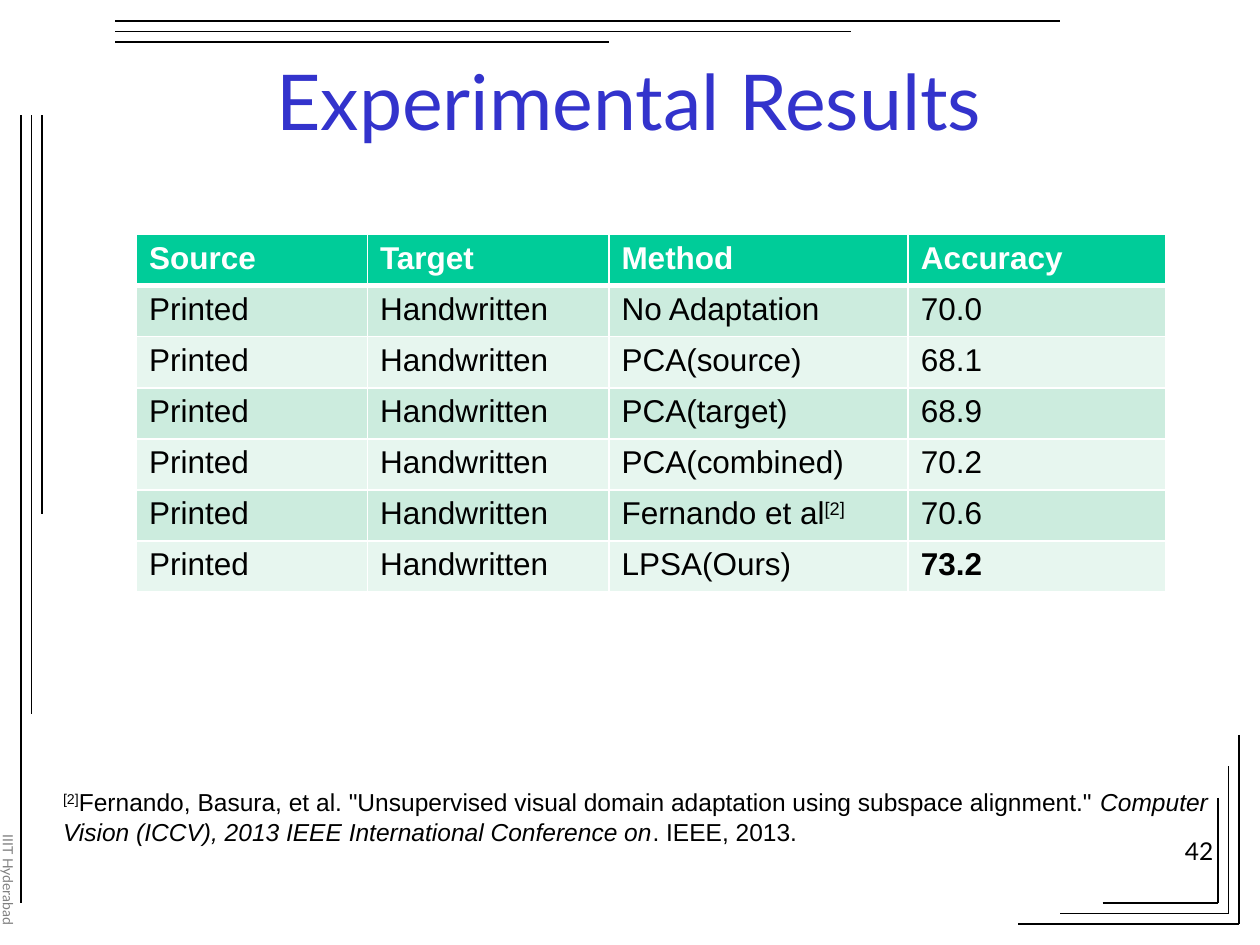
"""Build the "Experimental Results" slide with its ruled frame, table and citation."""
from dataclasses import dataclass
from typing import Optional

from lxml import etree
from pptx import Presentation
from pptx.dml.color import RGBColor
from pptx.enum import shapes, text
from pptx.oxml import ns
from pptx.util import Pt


@dataclass
class Run:
    text: str
    size: float
    color: str = "000000"
    font: str = "Arial"
    bold: bool = False
    italic: bool = False
    raised: bool = False


@dataclass
class Box:
    left: float
    top: float
    width: float
    height: float
    runs: list[Run]
    align: text.PP_ALIGN = text.PP_ALIGN.LEFT
    margins: tuple[float, float] = (7.2, 3.6)
    vert: Optional[str] = None


@dataclass
class Rule:
    x1: float
    y1: float
    x2: float
    y2: float


def rgb(value: str) -> RGBColor:
    return RGBColor.from_string(value)


def add_runs(p, runs: list[Run]) -> None:
    for run in runs:
        r = p.add_run()
        r.text = run.text
        values = {"name": run.font, "size": Pt(run.size), "bold": run.bold, "italic": run.italic}
        for name, value in values.items():
            setattr(r.font, name, value)
        r.font.color.rgb = rgb(run.color)
        if run.raised:
            r.font._element.set("baseline", "30000")


def place(sp, box: Box) -> None:
    for name in ("left", "top", "width", "height"):
        setattr(sp, name, Pt(getattr(box, name)))
    tf = sp.text_frame
    side, end = (Pt(m) for m in box.margins)
    values = {"word_wrap": True, "auto_size": text.MSO_AUTO_SIZE.NONE,
              "margin_left": side, "margin_right": side,
              "margin_top": end, "margin_bottom": end}
    for name, value in values.items():
        setattr(tf, name, value)
    if box.vert:
        tf._txBody.bodyPr.set("vert", box.vert)
    p = tf.paragraphs[0]
    p.alignment = box.align
    add_runs(p, box.runs)


def add_box(s, box: Box) -> None:
    place(s.shapes.add_textbox(0, 0, 0, 0), box)


def add_rule(s, rule: Rule) -> None:
    ends = (Pt(v) for v in (rule.x1, rule.y1, rule.x2, rule.y2))
    line = s.shapes.add_connector(shapes.MSO_CONNECTOR.STRAIGHT, *ends)
    line.line.color.rgb = rgb("000000")
    line.line.width = Pt(0.75)
    etree.SubElement(line._element.spPr, ns.qn("a:effectLst"))


def add_border(cell, side: str, width: float) -> None:
    tag = ns.qn(f"a:ln{side}")
    ln = etree.SubElement(cell._tc.get_or_add_tcPr(), tag, w=str(Pt(width)))
    fill = etree.SubElement(ln, ns.qn("a:solidFill"))
    etree.SubElement(fill, ns.qn("a:srgbClr"), val="FFFFFF")


def add_table(s, left: float, top: float, widths: list[float], row_height: float,
              rows: list[list[list[Run]]]) -> None:
    frame = s.shapes.add_table(len(rows), len(widths), Pt(left), Pt(top),
                               Pt(sum(widths)), Pt(row_height * len(rows)))
    table = frame.table
    for column, width in zip(table.columns, widths):
        column.width = Pt(width)
    for i, row in enumerate(rows):
        table.rows[i].height = Pt(row_height)
        fill = "00CC99" if i == 0 else ("E7F6EF", "CCECDE")[i % 2]
        for j, runs in enumerate(row):
            cell = table.cell(i, j)
            for side in "LRTB":
                heavy = (i, side) in ((0, "B"), (1, "T"))
                add_border(cell, side, 3 if heavy else 1)
            cell.fill.solid()
            cell.fill.fore_color.rgb = rgb(fill)
            add_runs(cell.text_frame.paragraphs[0], runs)


def frame_rules() -> list[Rule]:
    rules = []
    lengths = zip((606, 486, 348), (516, 408, 294), (582, 606, 630), (420, 438, 456))
    for i, (top_end, left_end, corner_x, corner_y) in enumerate(lengths):
        inset = 12 + 6 * i
        right, bottom = 720 - inset, 540 - inset
        rules += [Rule(66, inset, top_end, inset), Rule(inset, 66, inset, left_end),
                  Rule(corner_x, bottom, right, bottom), Rule(right, corner_y, right, bottom)]
    return rules


def result_rows() -> list[list[list[Run]]]:
    results = [("No Adaptation", "70.0"), ("PCA(source)", "68.1"), ("PCA(target)", "68.9"),
               ("PCA(combined)", "70.2"), ("Fernando et al", "70.6"), ("LPSA(Ours)", "73.2")]
    rows = [[[Run(name, 18, "FFFFFF", bold=True)]
             for name in ("Source", "Target", "Method", "Accuracy")]]
    for method, accuracy in results:
        rows.append([[Run(value, 18)] for value in ("Printed", "Handwritten", method, accuracy)])
    rows[5][2].append(Run("[2]", 18, raised=True))
    rows[6][3][0].bold = True
    return rows


def main() -> None:
    prs = Presentation()
    prs.slide_width, prs.slide_height = Pt(720), Pt(540)
    s = prs.slides.add_slide(prs.slide_layouts[5])
    for rule in frame_rules():
        add_rule(s, rule)
    add_box(s, Box(0, 477, 9.6, 63, [Run("IIIT Hyderabad", 8, "808080", "Lato")],
                   margins=(0, 0), vert="eaVert"))
    title = s.shapes.title
    place(title, Box(54, 12, 611, 89.5, [Run("Experimental Results", 44, "3333CC", "Lato")],
                     text.PP_ALIGN.CENTER))
    title.text_frame.vertical_anchor = text.MSO_ANCHOR.MIDDLE
    add_box(s, Box(665, 474, 35.5, 29.5, [Run("42", 14, font="Lato")], text.PP_ALIGN.RIGHT))
    add_table(s, 78, 134, [132, 138, 171, 147], 29.2, result_rows())
    citation = [
        Run("[2]", 14, raised=True),
        Run('Fernando, Basura, et al. "Unsupervised visual domain adaptation '
            'using subspace alignment." ', 14),
        Run("Computer Vision (ICCV), 2013 IEEE International Conference on", 14, italic=True),
        Run(". IEEE, 2013.", 14),
    ]
    add_box(s, Box(36, 450, 666, 30, citation, margins=(0, 0)))
    prs.save("out.pptx")


if __name__ == "__main__":
    main()
